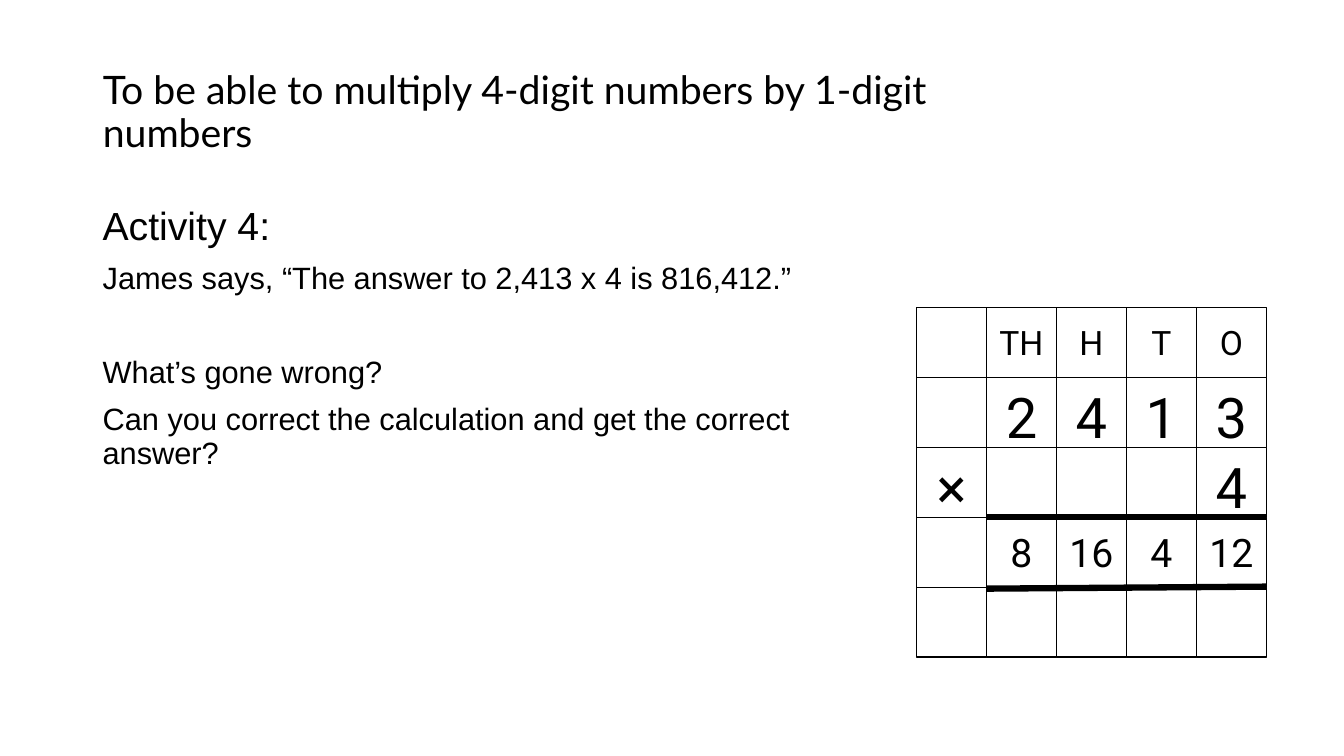
from lxml import etree
from pptx import Presentation
from pptx.dml.color import RGBColor
from pptx.enum.shapes import MSO_CONNECTOR, MSO_SHAPE
from pptx.enum.text import MSO_ANCHOR, PP_ALIGN
from pptx.oxml.ns import qn
from pptx.util import Inches, Pt

RECT = MSO_SHAPE.RECTANGLE
STRAIGHT = MSO_CONNECTOR.STRAIGHT
TOP, MIDDLE = MSO_ANCHOR.TOP, MSO_ANCHOR.MIDDLE
LEFT, CENTER = PP_ALIGN.LEFT, PP_ALIGN.CENTER

COLORS = {"ink": "000000", "paper": "FFFFFF"}
BODY = {"line_spacing": 0.9, "alignment": LEFT}


class SlideBuilder:
    """Holds the style and the current slide."""

    def __init__(self, prs):
        self.s = prs.slides.add_slide(prs.slide_layouts[5])
        self.ink = RGBColor.from_string(COLORS["ink"])
        self.paper = RGBColor.from_string(COLORS["paper"])

    def fill_paragraph(self, p, text, font, size, fmt):
        for name, value in fmt.items():
            setattr(p, name, value)
        r = p.add_run()
        r.text = text
        style = {"name": font, "size": Pt(size)}
        for name, value in style.items():
            setattr(r.font, name, value)
        r.font.color.rgb = self.ink

    def title(self, text, x, y, w, h):
        sp = self.s.shapes.title
        place = {"left": x, "top": y, "width": w, "height": h}
        for name, value in place.items():
            setattr(sp, name, Inches(value))
        tf = sp.text_frame
        tf.word_wrap = True
        tf.vertical_anchor = MIDDLE
        self.fill_paragraph(tf.paragraphs[0], text, "Lato", 28, BODY)

    def text(self, lines, x, y, w, h):
        sp = self.s.shapes.add_textbox(*map(Inches, (x, y, w, h)))
        tf = sp.text_frame
        tf.word_wrap = True
        for i, (text, size, before) in enumerate(lines):
            p = tf.add_paragraph() if i else tf.paragraphs[0]
            self.fill_paragraph(p, text, "Arial", size,
                                {**BODY, "space_before": Pt(before)})

    def cell(self, text, x, y, side, size, anchor):
        sp = self.s.shapes.add_shape(RECT, *map(Inches, (x, y, side, side)))
        sp.shadow.inherit = False
        sp.fill.solid()
        sp.fill.fore_color.rgb = self.paper
        sp.line.color.rgb = self.ink
        sp.line.width = Pt(1)
        if text:
            tf = sp.text_frame
            tf.vertical_anchor = anchor
            self.fill_paragraph(tf.paragraphs[0], text, "Roboto", size,
                                {"alignment": CENTER})

    def rule(self, x1, y1, x2, y2):
        line = self.s.shapes.add_connector(
            STRAIGHT, *map(Inches, (x1, y1, x2, y2)))
        line.line.color.rgb = self.ink
        line.line.width = Pt(4.5)
        etree.SubElement(line._element.spPr, qn("a:effectLst"))


def main():
    prs = Presentation()
    prs.slide_width, prs.slide_height = Inches(13.33), Inches(7.5)
    slide = SlideBuilder(prs)

    # Title and question
    slide.title("To be able to multiply 4-digit numbers by 1-digit numbers",
                0.92, 0.4, 9.6, 1.45)
    slide.text([
        ("Activity 4:", 28, 0),
        ("James says, “The answer to 2,413 x 4 is 816,412.”", 22, 10),
        ("What’s gone wrong?", 22, 43.5),
        ("Can you correct the calculation and get the correct answer?", 22, 10),
    ], 0.92, 2, 7.3, 4.76)

    # Place value grid: texts, size and anchor of each row
    left, top, pitch = 9.09, 3.05, 0.69
    rows = [
        (["", "TH", "H", "T", "O"], 24, MIDDLE),
        (["", "2", "4", "1", "3"], 40, TOP),
        (["×", "", "", "", "4"], 40, TOP),
        (["", "8", "16", "4", "12"], 28, MIDDLE),
        ([""] * 5, 40, TOP),
    ]
    right = 12.56
    pitch = (right - left) / len(rows)
    for i, (texts, size, anchor) in enumerate(rows):
        for j, text in enumerate(texts):
            slide.cell(text, left + j * pitch, top + i * pitch, pitch,
                       size, anchor)

    # Heavy rules around the answer row
    for y1, y2 in ((5.84, 5.82), (5.13, 5.13)):
        slide.rule(left + pitch, y1, right, y2)

    prs.save("out.pptx")


if __name__ == "__main__":
    main()
